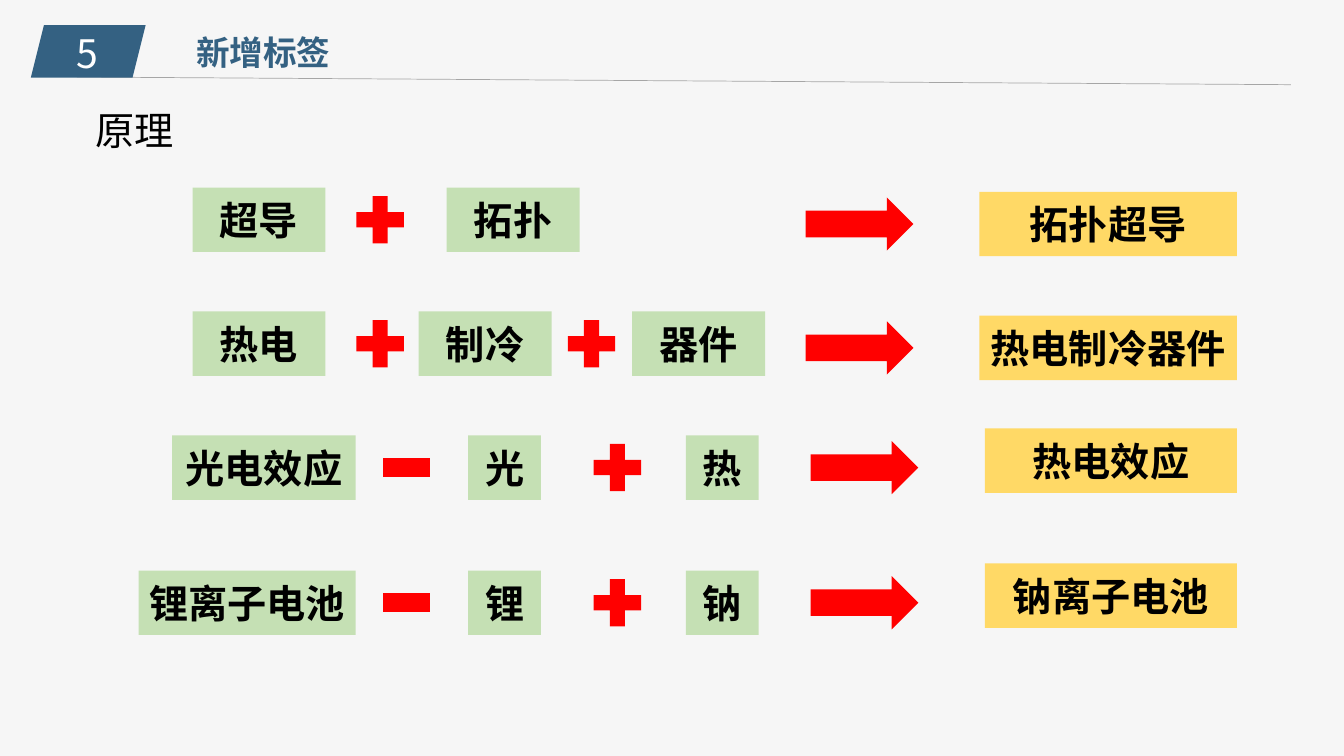
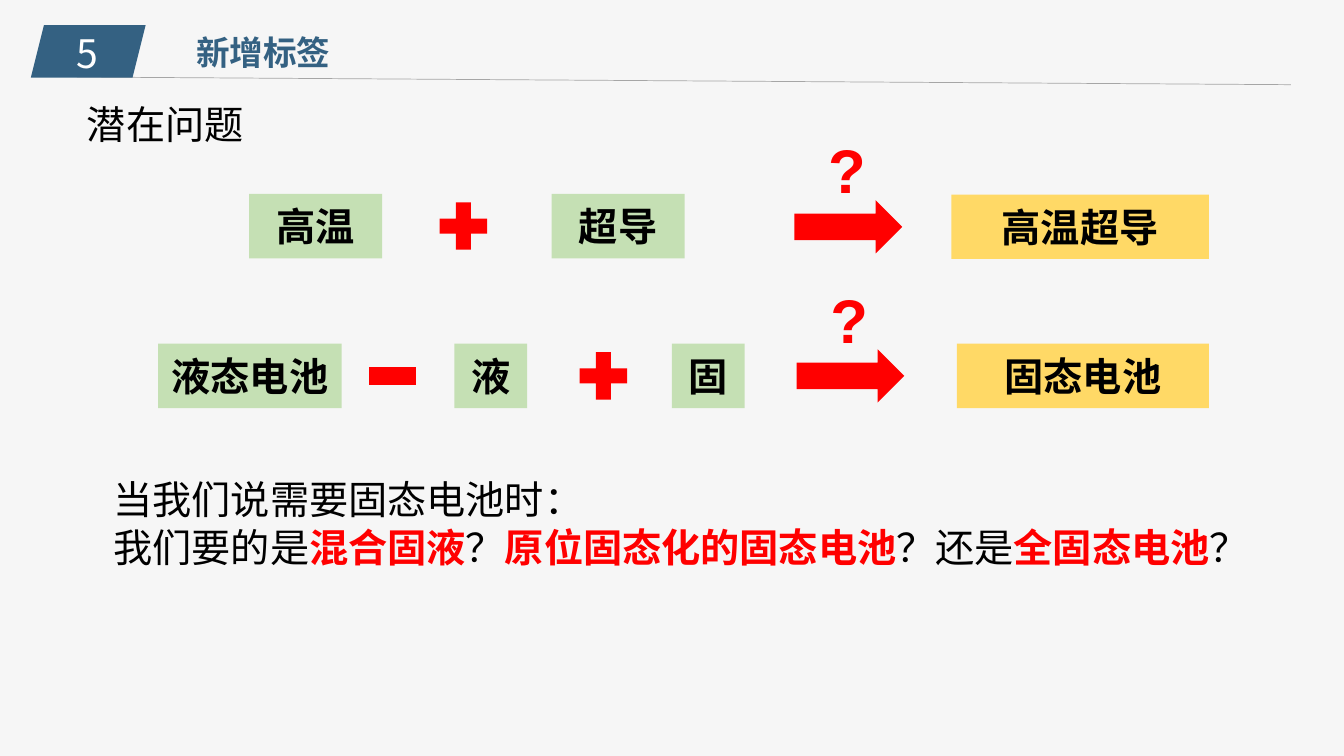
from lxml import etree
from pptx import Presentation
from pptx.dml.color import RGBColor
from pptx.enum import shapes, text
from pptx.oxml import ns
from pptx.util import Pt

COLORS = {
    "page": "F6F6F6", "navy": "346182", "rule": "A6A6A6", "white": "FFFFFF",
    "black": "000000", "term": "C5E0B4", "result": "FFD966", "red": "FF0000",
}
CJK, LATIN = "Noto Sans CJK SC", "Arial"
GEOMETRY = shapes.MSO_SHAPE
CENTER, LEFT = text.PP_ALIGN.CENTER, text.PP_ALIGN.LEFT
TERM_HEIGHT = 46
TERM_WIDTHS = {1: 52, 2: 95, 4: 131, 5: 155}
OPERATORS = {"+": (GEOMETRY.MATH_PLUS, 46), "-": (GEOMETRY.MATH_MINUS, 56)}
ARROW_WIDTH, ARROW_HEIGHT = 77, 38


def color(name):
    return RGBColor.from_string(COLORS[name])


def style(paragraph, size, ink="black", face=CJK, bold=False, align=LEFT):
    paragraph.alignment = align
    font = paragraph.font
    font.size, font.bold, font.name = Pt(size), bold, face
    font.color.rgb = color(ink)
    defaults = paragraph._p.pPr.find(ns.qn("a:defRPr"))
    etree.SubElement(defaults, ns.qn("a:ea")).set("typeface", face)


def add_block(slide, geometry, left, top, width, height, fill):
    block = slide.shapes.add_shape(geometry, Pt(left), Pt(top), Pt(width), Pt(height))
    block.shadow.inherit = False
    block.fill.solid()
    block.fill.fore_color.rgb = color(fill)
    block.line.fill.background()
    return block


def add_text(slide, left, top, width, height, wording, size, **look):
    frame = slide.shapes.add_textbox(Pt(left), Pt(top), Pt(width), Pt(height)).text_frame
    frame.word_wrap = True
    frame.vertical_anchor = text.MSO_ANCHOR.MIDDLE
    frame.text = wording
    for paragraph in frame.paragraphs:
        style(paragraph, size, **look)
    return frame


def add_label(slide, left, top, width, wording, fill):
    label = add_block(slide, GEOMETRY.RECTANGLE, left, top, width, TERM_HEIGHT, fill)
    label.text_frame.text = wording
    label.text_frame.vertical_anchor = text.MSO_ANCHOR.MIDDLE
    style(label.text_frame.paragraphs[0], 28, bold=True, align=CENTER)


def add_header(slide, number, title, left=22, top=18):
    rule = slide.shapes.add_connector(
        shapes.MSO_CONNECTOR.STRAIGHT,
        Pt(left + 33), Pt(top + 37), Pt(left + 900), Pt(top + 42.5))
    rule.line.color.rgb = color("rule")
    rule.line.width = Pt(0.5)
    etree.SubElement(rule._element.spPr, ns.qn("a:effectLst"))
    add_block(slide, GEOMETRY.PARALLELOGRAM, left, top, 82, 37.5, "navy")
    add_text(slide, left, top - 0.5, 81, 41, number, 28, ink="white", align=CENTER)
    add_text(slide, left + 111, top + 1, 198, 36, title, 24, ink="navy", bold=True)


def add_heading(slide, left, top, wording):
    add_text(slide, left, top, 854, 41, wording, 28, face=LATIN)


def add_operator(slide, left, top, sign):
    geometry, height = OPERATORS[sign]
    add_block(slide, geometry, left, top + (TERM_HEIGHT - height) / 2, 46, height, "red")


def add_outcome(slide, arrow_left, right, top, width, outcome, arrow_drop, drop, doubtful):
    arrow_top = top + (TERM_HEIGHT - ARROW_HEIGHT) / 2 + arrow_drop
    add_block(slide, GEOMETRY.RIGHT_ARROW, arrow_left, arrow_top,
              ARROW_WIDTH, ARROW_HEIGHT, "red")
    add_label(slide, right - width, top + drop, width, outcome, "result")
    if doubtful:
        mark = add_text(slide, arrow_left + 17, top - 48, 42, 60, "?", 44,
                        ink="red", face=LATIN, bold=True)
        mark.word_wrap = False


def add_sum(slide, top, pieces, outcome, arrow_left, right, drop=0, doubtful=False):
    for wording, left in pieces:
        if wording in OPERATORS:
            add_operator(slide, left, top, wording)
        else:
            add_label(slide, left, top, TERM_WIDTHS[len(wording)], wording, "term")
    add_outcome(slide, arrow_left, right, top, 184, outcome, drop, drop, doubtful)


def add_swap(slide, edge, top, terms, outcome, right, drop=0, doubtful=False):
    whole, removed, added = terms
    width = TERM_WIDTHS[len(whole)]
    add_label(slide, edge - width, top, width, whole, "term")
    add_operator(slide, edge + 13.5, top, "-")
    add_label(slide, edge + 80.5, top, TERM_WIDTHS[1], removed, "term")
    add_operator(slide, edge + 164, top, "+")
    add_label(slide, edge + 236, top, TERM_WIDTHS[1], added, "term")
    add_outcome(slide, edge + 325, right, top, 180, outcome, 0, drop, doubtful)


def add_closing(slide, left, top):
    opening = "当我们说需要固态电池时："
    question = [
        ("我们要的是", False), ("混合固液", True), ("？", False),
        ("原位固态化的固态电池", True), ("？还是", False),
        ("全固态电池", True), ("？", False),
    ]
    frame = add_text(slide, left, top, 854, 75, opening, 28, face=LATIN)
    paragraph = frame.add_paragraph()
    style(paragraph, 28, face=LATIN)
    for wording, stressed in question:
        run = paragraph.add_run()
        run.text = wording
        if stressed:
            run.font.bold = True
            run.font.color.rgb = color("red")


def new_slide(deck):
    slide = deck.slides.add_slide(deck.slide_layouts[6])
    slide.background.fill.solid()
    slide.background.fill.fore_color.rgb = color("page")
    add_header(slide, "5", "新增标签")
    return slide


def build_principle(deck):
    slide = new_slide(deck)
    add_heading(slide, 61, 72, "原理")
    right = 883.5
    add_sum(slide, 134, [("超导", 137.5), ("+", 248.5), ("拓扑", 319)],
            "拓扑超导", 575.5, right, drop=3)
    add_sum(slide, 222.5,
            [("热电", 137.5), ("+", 248.5), ("制冷", 299), ("+", 399.5), ("器件", 451.5)],
            "热电制冷器件", 575.5, right, drop=3)
    add_swap(slide, 254, 311, ("光电效应", "光", "热"), "热电效应", right, drop=-5)
    add_swap(slide, 254, 407.5, ("锂离子电池", "锂", "钠"), "钠离子电池", right, drop=-5)


def build_problem(deck):
    slide = new_slide(deck)
    add_heading(slide, 55, 68, "潜在问题")
    right = 863.5
    add_sum(slide, 138.5, [("高温", 178), ("+", 308), ("超导", 394)],
            "高温超导", 567.5, right, drop=0.5, doubtful=True)
    add_swap(slide, 244, 245.5, ("液态电池", "液", "固"), "固态电池", right, doubtful=True)
    add_closing(slide, 74, 336)


def main():
    deck = Presentation()
    deck.slide_width, deck.slide_height = Pt(960), Pt(540)
    build_principle(deck)
    build_problem(deck)
    deck.save("out.pptx")


if __name__ == "__main__":
    main()
